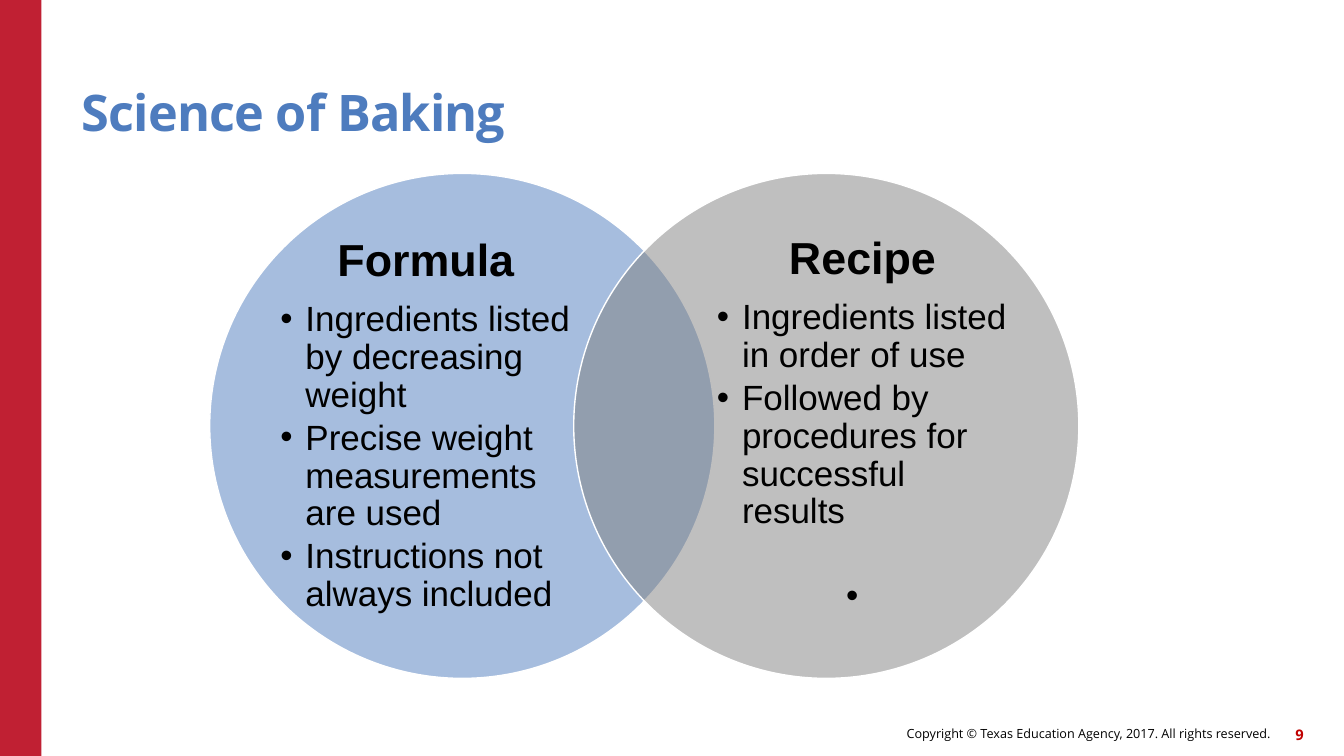
from lxml.etree import SubElement
from pptx import Presentation
from pptx.dml.color import RGBColor
from pptx.enum.shapes import MSO_SHAPE as Shape
from pptx.enum.text import MSO_ANCHOR as Anchor, MSO_AUTO_SIZE as AutoSize, PP_ALIGN as Align
from pptx.oxml.ns import qn
from pptx.util import Inches, Pt

COLORS = {"band": "C02033", "blue": "4E7CBE", "gray": "808080",
          "white": "FFFFFF", "black": "000000", "number": "C00000"}
TITLE = "Science of Baking"
COPYRIGHT = "Copyright © Texas Education Agency, 2017. All rights reserved."
PAGE_NUMBER = "9"
# heading, circle colour, circle left, text left, bullets
CIRCLES = [
    ("Formula", "blue", 2.08, 2.78, [
        "Ingredients listed by decreasing weight",
        "Precise weight measurements are used",
        "Instructions not always included"]),
    ("Recipe", "gray", 5.69, 7.11, [
        "Ingredients listed in order of use",
        "Followed by procedures for successful results",
        " "]),
]
CIRCLE_TOP, DIAMETER = 1.72, 5.01
TEXT_WIDTH, TEXT_HEIGHT = 2.89, 3.83
TEXT_TOP = CIRCLE_TOP + (DIAMETER - TEXT_HEIGHT) / 2
HEADING_SIZE, BULLET_SIZE = 32, 25


def color(name):
    return RGBColor.from_string(COLORS[name])


def set_font(paragraph, name, size, color_name, bold=False):
    font = paragraph.font
    font.name, font.size, font.bold = name, Pt(size), bold
    font.color.rgb = color(color_name)


def prepare_frame(frame, anchor):
    """Wrap the text, drop the margins and keep the size fixed."""
    frame.word_wrap = True
    frame.auto_size = AutoSize.NONE
    frame.vertical_anchor = anchor
    frame.margin_left = frame.margin_right = frame.margin_top = frame.margin_bottom = 0


def add_text_frame(slide, left, top, width, height):
    box = slide.shapes.add_textbox(Inches(left), Inches(top), Inches(width), Inches(height))
    prepare_frame(box.text_frame, Anchor.MIDDLE)
    return box.text_frame


def add_filled_shape(slide, kind, left, top, width, height, color_name):
    shape = slide.shapes.add_shape(kind, Inches(left), Inches(top), Inches(width), Inches(height))
    shape.shadow.inherit = False
    shape.fill.solid()
    shape.fill.fore_color.rgb = color(color_name)
    shape.line.fill.background()
    return shape


def add_footer(slide, text, left, top, width, size, color_name, bold):
    paragraph = add_text_frame(slide, left, top, width, 0.32).paragraphs[0]
    paragraph.text = text
    paragraph.alignment = Align.RIGHT
    set_font(paragraph, "Open Sans", size, color_name, bold)


def add_circle(slide, left, color_name):
    circle = add_filled_shape(slide, Shape.OVAL, left, CIRCLE_TOP, DIAMETER, DIAMETER, color_name)
    fill_color = circle.fill._xPr.find(qn("a:solidFill"))[0]
    SubElement(fill_color, qn("a:alpha"), val="50000")
    circle.line.color.rgb = color("white")
    circle.line.width = Pt(1)


def add_bullet(frame, text):
    paragraph = frame.add_paragraph()
    paragraph.text = text
    paragraph.level = 1
    paragraph.line_spacing = 0.9
    paragraph.space_after = Pt(BULLET_SIZE * 0.15)
    properties = paragraph._p.get_or_add_pPr()
    properties.set("marL", str(Inches(0.25)))
    properties.set("indent", str(Inches(-0.25)))
    SubElement(properties, qn("a:buFont"), typeface="Arial")
    SubElement(properties, qn("a:buChar"), char="•")
    set_font(paragraph, "Arial", BULLET_SIZE, "black")
    if not text.strip():  # the lone bullet is centred, one line lower
        paragraph.alignment = Align.CENTER
        paragraph.space_before = Pt(30)
        paragraph.font.name = "Calibri"


def add_list(slide, left, heading, bullets):
    frame = add_text_frame(slide, left, TEXT_TOP, TEXT_WIDTH, TEXT_HEIGHT)
    paragraph = frame.paragraphs[0]
    paragraph.text = heading
    paragraph.alignment = Align.CENTER
    paragraph.line_spacing = 0.9
    paragraph.space_after = Pt(HEADING_SIZE * 0.35)
    set_font(paragraph, "Arial", HEADING_SIZE, "black", True)
    for bullet in bullets:
        add_bullet(frame, bullet)


def add_title(slide):
    title = slide.shapes.title
    title.left, title.top = Inches(0.81), Inches(0.45)
    title.width, title.height = Inches(11), Inches(0.96)
    title.text_frame.text = TITLE
    prepare_frame(title.text_frame, Anchor.BOTTOM)
    paragraph = title.text_frame.paragraphs[0]
    paragraph.alignment = Align.LEFT
    paragraph.line_spacing = 0.9
    set_font(paragraph, "Open Sans", 36, "blue", True)
    paragraph.runs[0]._r.get_or_add_rPr().set("spc", "-60")


def main():
    presentation = Presentation()
    presentation.slide_width, presentation.slide_height = Inches(13.33), Inches(7.5)
    slide = presentation.slides.add_slide(presentation.slide_layouts[5])
    add_filled_shape(slide, Shape.RECTANGLE, 0, 0, 0.41, 7.5, "band")
    add_footer(slide, COPYRIGHT, 6.14, 7.12, 6.46, 9, "black", False)
    add_footer(slide, PAGE_NUMBER, 12.51, 7.13, 0.42, 10.5, "number", True)
    add_title(slide)
    for heading, color_name, circle_left, text_left, bullets in CIRCLES:
        add_circle(slide, circle_left, color_name)
        add_list(slide, text_left, heading, bullets)
    presentation.save("out.pptx")


if __name__ == "__main__":
    main()
